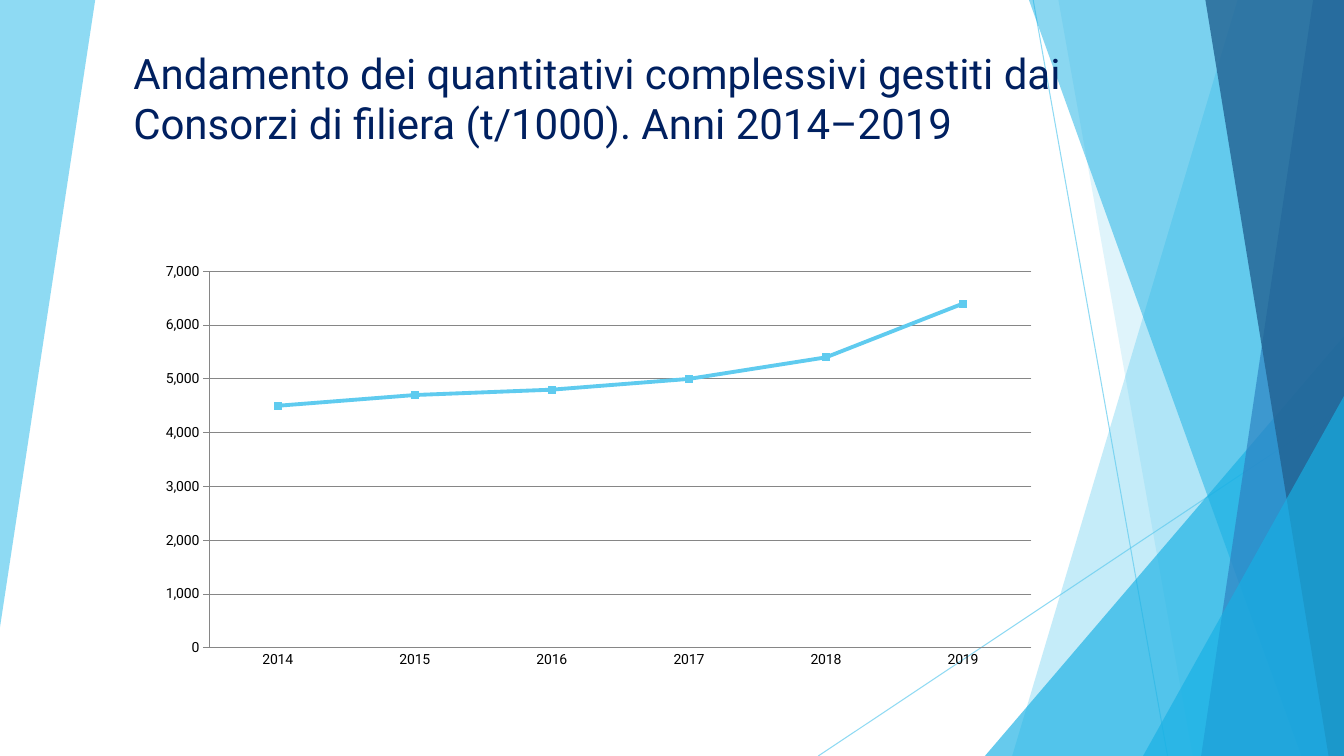
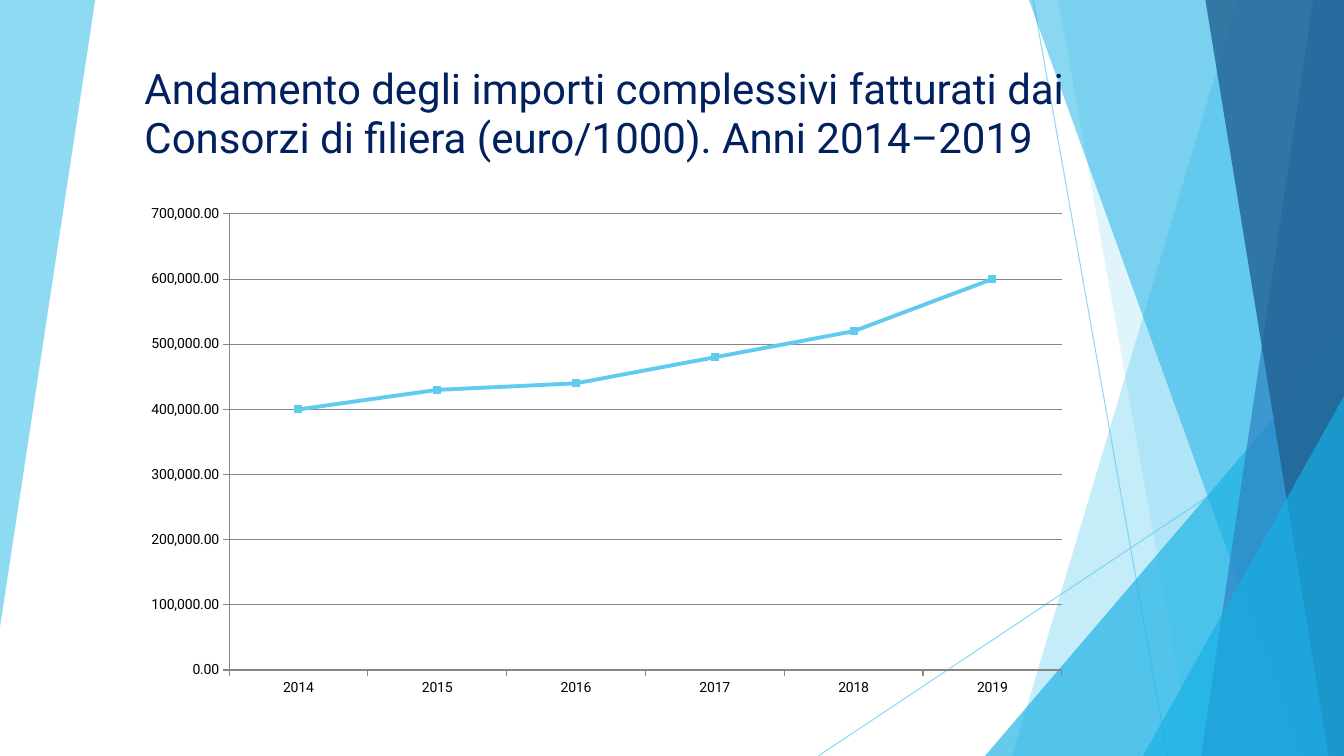
from dataclasses import dataclass

from lxml.etree import SubElement
from pptx import Presentation
from pptx.chart.data import CategoryChartData
from pptx.dml.color import RGBColor
from pptx.enum.chart import XL_CHART_TYPE, XL_MARKER_STYLE, XL_TICK_MARK
from pptx.enum.shapes import MSO_CONNECTOR, MSO_SHAPE, PP_PLACEHOLDER
from pptx.enum.text import MSO_ANCHOR, MSO_AUTO_SIZE, PP_ALIGN
from pptx.oxml import parse_xml
from pptx.oxml.ns import nsdecls, qn
from pptx.util import Pt


@dataclass(frozen=True)
class Theme:
    font: str = "Roboto"
    navy: RGBColor = RGBColor(0x00, 0x20, 0x60)
    sky: RGBColor = RGBColor(0x5F, 0xCB, 0xEF)
    cyan: RGBColor = RGBColor(0x17, 0xB0, 0xE4)
    blue: RGBColor = RGBColor(0x2E, 0x83, 0xC3)
    deep: RGBColor = RGBColor(0x22, 0x62, 0x92)
    black: RGBColor = RGBColor(0x00, 0x00, 0x00)
    grid: RGBColor = RGBColor(0x86, 0x86, 0x86)
    title_size: int = 30
    label_size: int = 10
    hairline: float = 0.75
    series_line: float = 2.75
    marker_size: int = 5


WIDTH, HEIGHT = 960, 540
YEARS = [str(year) for year in range(2014, 2020)]


class DeckBuilder:
    def __init__(self, theme):
        self.theme = theme
        self.deck = Presentation()
        self.deck.slide_width, self.deck.slide_height = Pt(WIDTH), Pt(HEIGHT)
        self.layout = self.deck.slide_layouts.get_by_name("Title Only")
        for holder in list(self.layout.placeholders):
            if holder.placeholder_format.type != PP_PLACEHOLDER.TITLE:
                holder.element.getparent().remove(holder.element)
        self.page = None

    def add_page(self):
        self.page = self.deck.slides.add_slide(self.layout)

    # Background decoration
    def set_opacity(self, shape, percent):
        for color in shape.element.iter(qn("a:srgbClr")):
            SubElement(color, qn("a:alpha"), val=str(percent * 1000))

    def paint(self, shape, color, percent):
        shape.shadow.inherit = False
        shape.fill.solid()
        shape.fill.fore_color.rgb = color
        shape.line.fill.background()
        self.set_opacity(shape, percent)

    def polygon(self, corners, color, percent):
        start, *others = [(Pt(x), Pt(y)) for x, y in corners]
        outline = self.page.shapes.build_freeform(*start)
        outline.add_line_segments(others, close=True)
        self.paint(outline.convert_to_shape(), color, percent)

    def band(self, top_x, bottom_x, color, percent):
        corners = [(top_x, 0), (WIDTH, 0), (WIDTH, HEIGHT), (bottom_x, HEIGHT)]
        self.polygon(corners, color, percent)

    def corner_triangle(self, left, top, color, percent):
        triangle = self.page.shapes.add_shape(
            MSO_SHAPE.ISOSCELES_TRIANGLE,
            Pt(left), Pt(top), Pt(WIDTH - left), Pt(HEIGHT - top))
        triangle.adjustments[0] = 1
        self.paint(triangle, color, percent)

    def thin_line(self, start, end, color, percent):
        line = self.page.shapes.add_connector(
            MSO_CONNECTOR.STRAIGHT, *[Pt(value) for value in start + end])
        line.line.color.rgb = color
        line.line.width = Pt(self.theme.hairline)
        SubElement(line.element.spPr, qn("a:effectLst"))
        self.set_opacity(line, percent)

    def share_decoration(self):
        """Move everything but the title from the page to its layout."""
        for shape in list(self.page.shapes):
            if not shape.is_placeholder:
                self.layout.shapes.element.append(shape.element)

    # Content
    def title(self, text, left, top, width, height):
        box = self.page.shapes.title
        box.left, box.top, box.width, box.height = map(Pt, (left, top, width, height))
        frame = box.text_frame
        frame.text = text
        frame.word_wrap = True
        frame.auto_size = MSO_AUTO_SIZE.NONE
        frame.vertical_anchor = MSO_ANCHOR.BOTTOM
        frame.margin_right = Pt(60)
        para = frame.paragraphs[0]
        para.alignment = PP_ALIGN.LEFT
        para.line_spacing = 0.98
        span = para.runs[0]
        span.font.name = self.theme.font
        span.font.size = Pt(self.theme.title_size)
        span.font.color.rgb = self.theme.navy

    def line_chart(self, kind, values, area, plot, number_format, step,
                   category_tick, marker_color):
        data = CategoryChartData()
        data.categories = YEARS
        data.add_series("Series 1", values)
        chart = self.page.shapes.add_chart(kind, *map(Pt, area), data).chart
        chart.has_legend = chart.has_title = False
        chart.font.name = self.theme.font
        chart.font.size = Pt(self.theme.label_size)
        chart.font.color.rgb = self.theme.black
        self.place_plot(chart, plot)

        value_axis, category_axis = chart.value_axis, chart.category_axis
        value_axis.minimum_scale, value_axis.maximum_scale = 0, 7 * step
        value_axis.major_unit = step
        value_axis.has_major_gridlines = True
        value_axis.major_tick_mark = XL_TICK_MARK.OUTSIDE
        value_axis.tick_labels.number_format = number_format
        value_axis.tick_labels.number_format_is_linked = False
        category_axis.major_tick_mark = category_tick
        for part in (value_axis, category_axis, value_axis.major_gridlines):
            part.format.line.color.rgb = self.theme.grid
            part.format.line.width = Pt(self.theme.hairline)

        chart.plots[0].vary_by_categories = False
        series = chart.plots[0].series[0]
        series.smooth = False
        self.style_line(series, marker_color)
        self.style_line(series.points[0], self.theme.sky)

    def style_line(self, target, marker_color):
        target.format.line.color.rgb = self.theme.sky
        target.format.line.width = Pt(self.theme.series_line)
        marker = target.marker
        marker.style = XL_MARKER_STYLE.SQUARE
        marker.size = self.theme.marker_size
        marker.format.fill.solid()
        marker.format.fill.fore_color.rgb = marker_color
        marker.format.line.color.rgb = marker_color

    def place_plot(self, chart, plot):
        sides = "".join(f'<c:{side} val="{value}"/>' for side, value in zip("xywh", plot))
        plot_area = chart.element.chart.plotArea
        for layout in plot_area.findall(qn("c:layout")):
            plot_area.remove(layout)
        plot_area.insert(0, parse_xml(
            f'<c:layout {nsdecls("c")}><c:manualLayout><c:layoutTarget val="inner"/>'
            f'<c:xMode val="edge"/><c:yMode val="edge"/>{sides}'
            '</c:manualLayout></c:layout>'))


def decorate(builder):
    theme = builder.theme
    builder.polygon([(0, 0), (68, 0), (0, 448)], theme.sky, 70)
    builder.thin_line((738, 0), (834, HEIGHT), theme.sky, 70)
    builder.thin_line((WIDTH, 290), (584.5, HEIGHT), theme.sky, 70)
    builder.band(884, 723, theme.sky, 36)
    builder.band(756, 852, theme.sky, 20)
    builder.corner_triangle(703.5, 240, theme.cyan, 66)
    builder.band(735, 929.5, theme.cyan, 50)
    builder.band(938, 858, theme.blue, 70)
    builder.band(861, 949, theme.deep, 80)
    builder.corner_triangle(816.5, 283, theme.cyan, 66)
    builder.share_decoration()


def main():
    theme = Theme()
    builder = DeckBuilder(theme)

    # Quantities
    builder.add_page()
    decorate(builder)
    builder.title("Andamento dei quantitativi complessivi gestiti dai Consorzi di filiera "
                  "(t/1000). Anni 2014–2019", 88, 19.5, 834, 90.5)
    builder.line_chart(
        XL_CHART_TYPE.LINE_MARKERS, [4500, 4700, 4800, 5000, 5400, 6400],
        area=(88, 127.5, 683, 368.5), plot=(0.09, 0.18, 0.86, 0.73),
        number_format="#,##0", step=1000,
        category_tick=XL_TICK_MARK.NONE, marker_color=theme.navy)

    # Amounts invoiced
    builder.add_page()
    builder.title("Andamento degli importi complessivi fatturati dai Consorzi di filiera "
                  "(euro/1000). Anni 2014–2019", 96, 36, 790.5, 84.5)
    builder.line_chart(
        XL_CHART_TYPE.LINE_MARKERS_STACKED,
        [400000, 430000, 440000, 480000, 520000, 600000],
        area=(96, 142, 676, 362), plot=(0.1, 0.03, 0.88, 0.9),
        number_format="#,##0.00", step=100000,
        category_tick=XL_TICK_MARK.OUTSIDE, marker_color=theme.sky)

    builder.deck.save("out.pptx")


if __name__ == "__main__":
    main()
